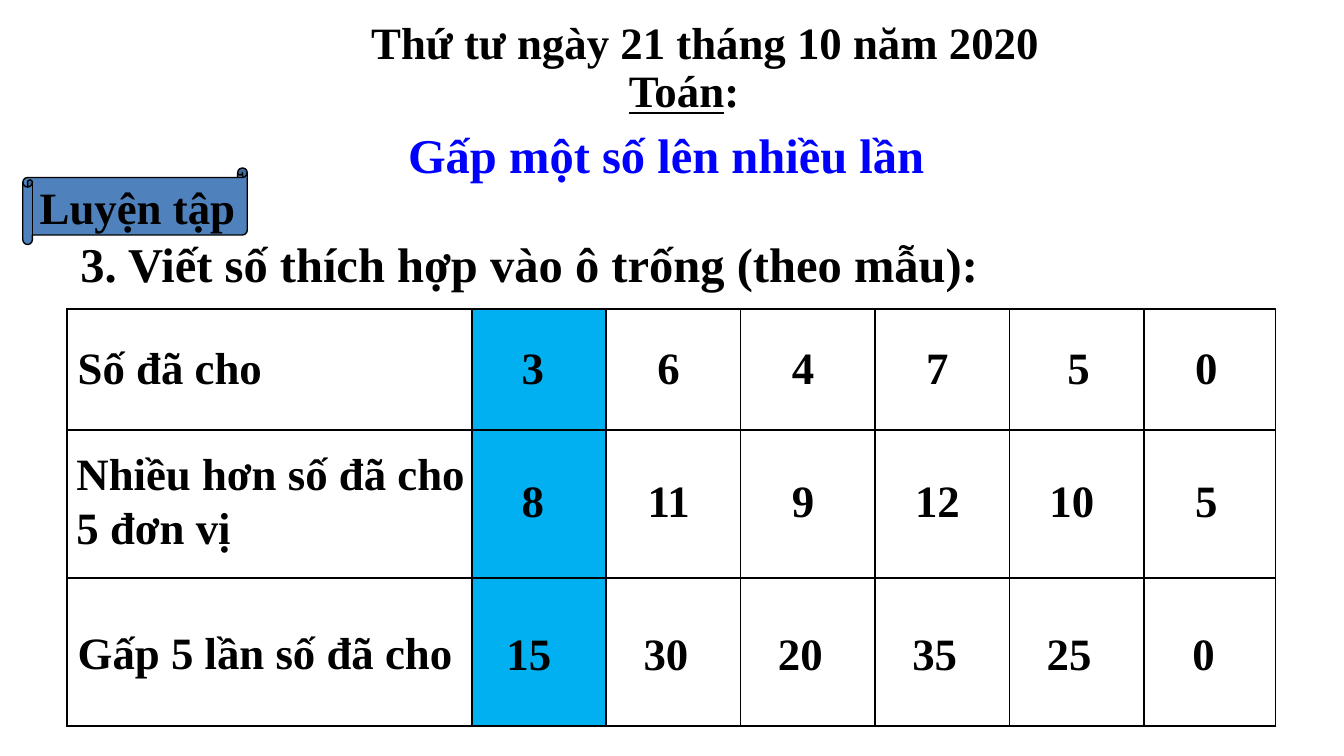
from pptx import Presentation
from pptx.dml.color import RGBColor
from pptx.enum.shapes import MSO_SHAPE as Preset
from pptx.enum.text import MSO_ANCHOR as Anchor, MSO_AUTO_SIZE as AutoSize, PP_ALIGN as Align
from pptx.oxml import parse_xml
from pptx.oxml.ns import nsdecls
from pptx.util import Inches, Pt

# Content
DATE = "Thứ tư ngày 21 tháng 10 năm 2020"
SUBJECT = "Toán"
LESSON = "Gấp một số lên nhiều lần"
BADGE = "Luyện tập"
EXERCISE = "3. Viết số thích hợp vào ô trống (theo mẫu):"
ROWS = [
    # label, its left, top, width and height; numbers, their top and lefts
    {"label": "Số đã cho", "label_box": (0.48, 2.48, 1.88, 0.5),
     "numbers": [3, 6, 4, 7, 5, 0], "top": 2.48,
     "lefts": [3.61, 4.62, 5.62, 6.62, 7.67, 8.62]},
    {"label": "Nhiều hơn số đã cho 5 đơn vị", "label_box": (0.47, 3.27, 3.18, 0.91),
     "numbers": [8, 11, 9, 12, 10, 5], "top": 3.47,
     "lefts": [3.61, 4.62, 5.62, 6.62, 7.62, 8.62]},
    {"label": "Gấp 5 lần số đã cho", "label_box": (0.48, 4.6, 3.17, 0.5),
     "numbers": [15, 30, 20, 35, 25, 0], "top": 4.61,
     "lefts": [3.58, 4.6, 5.6, 6.6, 7.6, 8.6]},
]

# Layout
SLIDE_WIDTH = Inches(10)
SLIDE_HEIGHT = SLIDE_WIDTH * 9 // 16
TABLE_BOX = (0.5, 2.3, 9, 3.1)
COLUMN_WIDTHS = [3.01, 1, 1, 1, 1, 1, 0.98]
ROW_HEIGHTS = [0.9, 1.1, 1.1]
EXAMPLE_COLUMN = 1
NUMBER_SIZE = (0.71, 0.5)

THEME = {
    "font": "Times New Roman",
    "text": RGBColor(0, 0, 0),
    "accent": RGBColor(0x00, 0x00, 0xFF),
    "badge": RGBColor(0x4F, 0x81, 0xBD),
    "example": RGBColor(0x00, 0xB0, 0xF0),
    "cell": RGBColor(0xFF, 0xFF, 0xFF),
    "border": RGBColor(0, 0, 0),
    "size": 24,
    "heading": 26,
}


def inches(box):
    return [Inches(value) for value in box]


def add_run(paragraph, text, size=THEME["size"], color=THEME["text"], underline=None):
    run = paragraph.add_run()
    run.text = text
    font = run.font
    font.name, font.size, font.bold = THEME["font"], Pt(size), True
    font.color.rgb, font.underline = color, underline


def add_text(slide, box, text, align=Align.LEFT, **style):
    frame = slide.shapes.add_textbox(*inches(box)).text_frame
    frame.word_wrap = True
    paragraph = frame.paragraphs[0]
    paragraph.alignment = align
    add_run(paragraph, text, **style)
    return paragraph


def set_borders(cell):
    properties = cell._tc.get_or_add_tcPr()
    for side in ("lnL", "lnR", "lnT", "lnB"):
        properties.append(parse_xml(
            f'<a:{side} {nsdecls("a")} w="{Pt(1)}"><a:solidFill>'
            f'<a:srgbClr val="{THEME["border"]}"/></a:solidFill></a:{side}>'))


def add_heading(slide):
    add_text(slide, (2.58, 0.06, 5.33, 0.5), DATE, Align.CENTER)
    subject = add_text(slide, (4.58, 0.42, 1.08, 0.5), SUBJECT, underline=True)
    add_run(subject, ":", underline=False)

    title = slide.shapes.title
    title.left, title.top, title.width, title.height = inches((1.17, 0.88, 7.58, 0.54))
    frame = title.text_frame
    frame.auto_size, frame.vertical_anchor = AutoSize.NONE, Anchor.TOP
    frame.paragraphs[0].alignment = Align.CENTER
    add_run(frame.paragraphs[0], LESSON, THEME["heading"], THEME["accent"])


def add_badge(slide):
    scroll = slide.shapes.add_shape(Preset.HORIZONTAL_SCROLL, *inches((0.17, 1.25, 1.67, 0.57)))
    scroll.shadow.inherit = False
    scroll.fill.solid()
    scroll.fill.fore_color.rgb = THEME["badge"]
    scroll.line.color.rgb, scroll.line.width = THEME["border"], Pt(0.75)
    frame = scroll.text_frame
    frame.word_wrap, frame.vertical_anchor = False, Anchor.MIDDLE
    frame.paragraphs[0].alignment = Align.CENTER
    add_run(frame.paragraphs[0], BADGE)


def add_grid(slide):
    table = slide.shapes.add_table(
        len(ROW_HEIGHTS), len(COLUMN_WIDTHS), *inches(TABLE_BOX)).table
    table.first_row = table.horz_banding = False
    for column, width in zip(table.columns, COLUMN_WIDTHS):
        column.width = Inches(width)
    for row, height in zip(table.rows, ROW_HEIGHTS):
        row.height = Inches(height)
        for index, cell in enumerate(row.cells):
            set_borders(cell)
            cell.fill.solid()
            cell.fill.fore_color.rgb = THEME["example" if index == EXAMPLE_COLUMN else "cell"]


def add_answers(slide):
    for row in ROWS:
        add_text(slide, row["label_box"], row["label"])
        for number, left in zip(row["numbers"], row["lefts"]):
            add_text(slide, (left, row["top"], *NUMBER_SIZE), str(number), Align.CENTER)


def main():
    presentation = Presentation()
    presentation.slide_width, presentation.slide_height = SLIDE_WIDTH, SLIDE_HEIGHT
    slide = presentation.slides.add_slide(presentation.slide_layouts.get_by_name("Title Only"))
    add_heading(slide)
    add_badge(slide)
    add_grid(slide)
    add_text(slide, (0.5, 1.69, 7, 0.54), EXERCISE, size=THEME["heading"])
    add_answers(slide)
    presentation.save("out.pptx")


if __name__ == "__main__":
    main()
